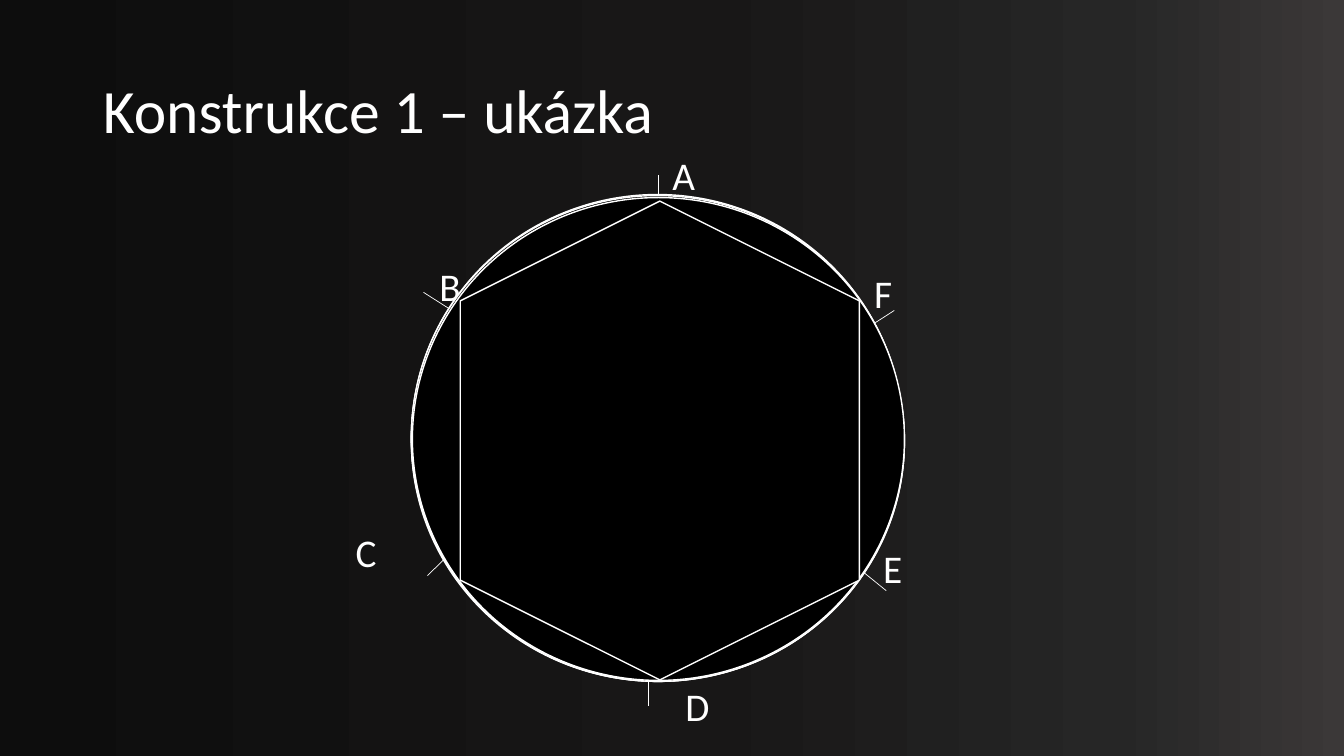
from copy import deepcopy
from dataclasses import dataclass

from lxml.etree import SubElement
from pptx import Presentation
from pptx.dml.color import RGBColor
from pptx.enum.shapes import MSO_CONNECTOR, MSO_SHAPE as Preset
from pptx.enum.text import MSO_ANCHOR, MSO_AUTO_SIZE, PP_ALIGN
from pptx.oxml.ns import qn
from pptx.slide import Slide
from pptx.text.text import TextFrame
from pptx.util import Inches, Pt

WHITE = RGBColor(0xFF, 0xFF, 0xFF)
BLACK = RGBColor(0x00, 0x00, 0x00)
BACKDROP = (
    (0.0, RGBColor(0x0D, 0x0D, 0x0D)),
    (0.52, RGBColor(0x18, 0x17, 0x17)),
    (0.83, RGBColor(0x26, 0x26, 0x26)),
    (1.0, RGBColor(0x3B, 0x38, 0x38)),
)
FONT = "Calibri"
CIRCLE_WIDTH = 4.88


@dataclass(frozen=True)
class Vertex:
    """A lettered point with its compass mark across the circle."""
    letter: str
    label_left: float
    label_top: float
    label_width: float
    mark_start: tuple[float, float]
    mark_end: tuple[float, float]


@dataclass(frozen=True)
class Circle:
    preset: Preset
    left: float
    top: float
    height: float


VERTICES = (
    Vertex("A", 6.57, 1.45, 0.94, (6.53, 1.74), (6.53, 2.44)),
    Vertex("B", 4.26, 2.55, 0.58, (4.64, 3.18), (4.2, 2.9)),
    Vertex("C", 3.43, 5.19, 0.6, (4.58, 5.38), (4.24, 5.71)),
    Vertex("D", 6.7, 6.72, 0.43, (6.43, 6.54), (6.43, 7)),
    Vertex("E", 8.66, 5.35, 0.75, (8.42, 5.56), (8.79, 5.86)),
    Vertex("F", 8.57, 2.62, 1.12, (8.42, 3.37), (8.87, 3.08)),
)
CIRCLES = (
    Circle(Preset.FLOWCHART_CONNECTOR, 4.09, 2, 4.76),
    Circle(Preset.FLOWCHART_CONNECTOR, 4.08, 2, 4.76),
    Circle(Preset.FLOWCHART_CONNECTOR, 4.08, 1.98, 4.76),
    Circle(Preset.FLOWCHART_CONNECTOR, 4.09, 1.99, 4.77),
    Circle(Preset.OVAL, 4.08, 1.93, 4.81),
    Circle(Preset.OVAL, 4.08, 1.94, 4.79),
    Circle(Preset.OVAL, 4.09, 1.96, 4.79),
)


def paint_backdrop(slide: Slide) -> None:
    fill = slide.background.fill
    fill.gradient()
    fill.gradient_angle = 0
    stop_list = next(slide.element.iter(qn("a:gsLst")))
    for _ in range(len(BACKDROP) - len(stop_list)):
        stop_list.append(deepcopy(stop_list[0]))
    for stop, (position, color) in zip(fill.gradient_stops, BACKDROP):
        stop.position = position
        stop.color.rgb = color


def write(frame: TextFrame, text: str, size: int) -> None:
    run = frame.paragraphs[0].add_run()
    run.text = text
    run.font.name = FONT
    run.font.size = Pt(size)
    run.font.color.rgb = WHITE


def draw_title(slide: Slide, text: str) -> None:
    title = slide.shapes.title
    title.left, title.top = Inches(0.92), Inches(0.4)
    title.width, title.height = Inches(11.5), Inches(1.45)
    frame = title.text_frame
    frame.vertical_anchor = MSO_ANCHOR.MIDDLE
    frame.paragraphs[0].alignment = PP_ALIGN.LEFT
    frame.paragraphs[0].line_spacing = 0.9
    write(frame, text, 44)


def draw_vertex(slide: Slide, vertex: Vertex) -> None:
    ends = (Inches(value) for value in vertex.mark_start + vertex.mark_end)
    mark = slide.shapes.add_connector(MSO_CONNECTOR.STRAIGHT, *ends)
    mark.line.color.rgb = WHITE
    mark.line.width = Pt(0.5)
    SubElement(mark.element.spPr, qn("a:effectLst"))

    label = slide.shapes.add_textbox(
        Inches(vertex.label_left), Inches(vertex.label_top),
        Inches(vertex.label_width), Inches(0.57))
    label.text_frame.word_wrap = True
    label.text_frame.auto_size = MSO_AUTO_SIZE.SHAPE_TO_FIT_TEXT
    write(label.text_frame, vertex.letter, 28)


def draw_outline(slide: Slide, preset: Preset, left: float, top: float,
                 width: float, height: float, rotation: float = 0) -> None:
    outline = slide.shapes.add_shape(
        preset, Inches(left), Inches(top), Inches(width), Inches(height))
    outline.rotation = rotation
    outline.shadow.inherit = False
    outline.fill.solid()
    outline.fill.fore_color.rgb = BLACK
    outline.line.color.rgb = WHITE
    outline.line.width = Pt(1)


def main() -> None:
    deck = Presentation()
    deck.slide_width, deck.slide_height = Inches(13.33), Inches(7.5)
    slide = deck.slides.add_slide(deck.slide_layouts.get_by_name("Title Only"))

    # Background and title
    paint_backdrop(slide)
    draw_title(slide, "Konstrukce 1 – ukázka")

    # Letters and marks, whose inner ends lie under the circles
    for vertex in VERTICES:
        draw_vertex(slide, vertex)

    # Circles drawn over one another, then the inscribed hexagon
    for circle in CIRCLES:
        draw_outline(slide, circle.preset, circle.left, circle.top,
                     CIRCLE_WIDTH, circle.height)
    draw_outline(slide, Preset.HEXAGON, 4.17, 2.39, 4.75, 3.96, rotation=270)

    deck.save("out.pptx")


if __name__ == "__main__":
    main()
